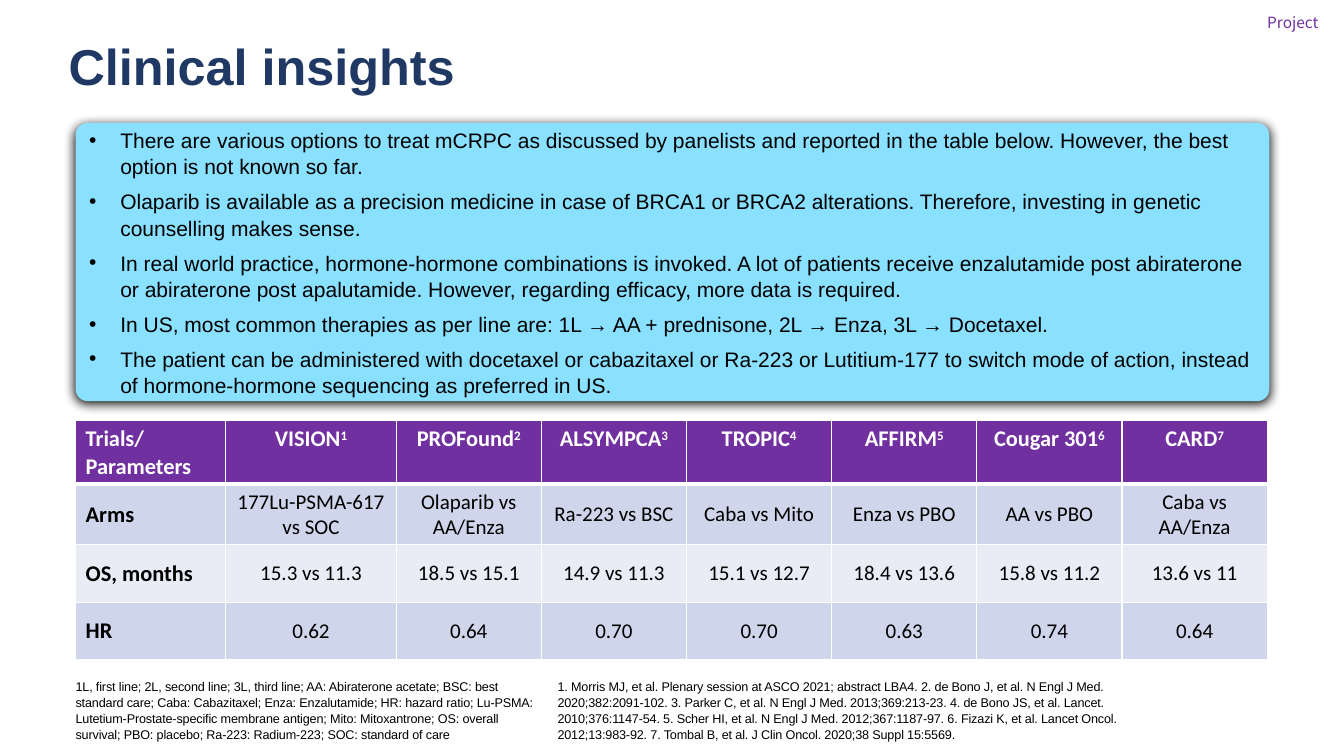
from lxml import etree
from pptx import Presentation
from pptx.dml.color import RGBColor
from pptx.enum.shapes import MSO_SHAPE as Shape
from pptx.enum.text import MSO_ANCHOR as Anchor, PP_ALIGN as Align
from pptx.oxml import parse_xml
from pptx.oxml.ns import nsdecls, qn
from pptx.util import Inches, Pt

COLORS = {
    "purple": "7030A0", "navy": "203864", "sky": "89E0FF", "black": "000000",
    "white": "FFFFFF", "band": "CFD5EA", "light": "E9EBF5",
}
INSIGHTS = [
    "There are various options to treat mCRPC as discussed by panelists and reported in the table below. However, the best option is not known so far.",
    "Olaparib is available as a precision medicine in case of BRCA1 or BRCA2 alterations. Therefore, investing in genetic counselling makes sense.",
    "In real world practice, hormone-hormone combinations is invoked. A lot of patients receive enzalutamide post abiraterone or abiraterone post apalutamide. However, regarding efficacy, more data is required.",
    "In US, most common therapies as per line are: 1L → AA + prednisone, 2L → Enza, 3L → Docetaxel.",
    "The patient can be administered with docetaxel or cabazitaxel or Ra-223 or Lutitium-177 to switch mode of action, instead of hormone-hormone sequencing as preferred in US.",
]
TRIALS = [
    ["Trials/\nParameters", "VISION", "PROFound", "ALSYMPCA", "TROPIC", "AFFIRM", "Cougar 301", "CARD"],
    ["Arms", "177Lu-PSMA-617\nvs SOC", "Olaparib vs AA/Enza", "Ra-223 vs BSC", "Caba vs Mito",
     "Enza vs PBO", "AA vs PBO", "Caba vs AA/Enza"],
    ["OS, months", "15.3 vs 11.3", "18.5 vs 15.1", "14.9 vs 11.3", "15.1 vs 12.7",
     "18.4 vs 13.6", "15.8 vs 11.2", "13.6 vs 11"],
    ["HR", "0.62", "0.64", "0.70", "0.70", "0.63", "0.74", "0.64"],
]
ABBREVIATIONS = "1L, first line; 2L, second line; 3L, third line; AA: Abiraterone acetate; BSC: best standard care; Caba: Cabazitaxel; Enza: Enzalutamide; HR: hazard ratio; Lu-PSMA: Lutetium-Prostate-specific membrane antigen; Mito: Mitoxantrone; OS: overall survival; PBO: placebo; Ra-223: Radium-223; SOC: standard of care"
REFERENCES = "1. Morris MJ, et al. Plenary session at ASCO 2021; abstract LBA4. 2. de Bono J, et al. N Engl J Med. 2020;382:2091-102. 3. Parker C, et al. N Engl J Med. 2013;369:213-23. 4. de Bono JS, et al. Lancet. 2010;376:1147-54. 5. Scher HI, et al. N Engl J Med. 2012;367:1187-97. 6. Fizazi K, et al. Lancet Oncol. 2012;13:983-92. 7. Tombal B, et al. J Clin Oncol. 2020;38 Suppl 15:5569."


def apply_format(target, **values):
    """Set each given attribute on the target."""
    for name, value in values.items():
        setattr(target, name, value)


def add_run(paragraph, text, color, **values):
    """Add a run with its colour and font values."""
    run = paragraph.add_run()
    run.text = text
    run.font.color.rgb = RGBColor.from_string(COLORS[color])
    apply_format(run.font, **values)
    return run


def add_title(slide, box, text):
    """Place the title placeholder and format its text."""
    title = slide.shapes.title
    apply_format(title, **dict(zip(("left", "top", "width", "height"), map(Inches, box))))
    apply_format(title.text_frame, word_wrap=True, vertical_anchor=Anchor.MIDDLE)
    paragraph = title.text_frame.paragraphs[0]
    paragraph.alignment = Align.LEFT
    add_run(paragraph, text, "navy", name="Arial", size=Pt(36), bold=True)


def add_project_label(slide, box, text):
    """Add the small label in the top right corner."""
    frame = slide.shapes.add_textbox(*map(Inches, box)).text_frame
    frame.word_wrap = True
    add_run(frame.paragraphs[0], text, "purple", name="Noto Sans CJK SC", size=Pt(11))


def add_insights(slide, box, items):
    """Add the shadowed panel with its bulleted insights."""
    panel = slide.shapes.add_shape(Shape.ROUNDED_RECTANGLE, *map(Inches, box))
    panel.adjustments[0] = 0.044
    panel.fill.solid()
    panel.fill.fore_color.rgb = RGBColor.from_string(COLORS["sky"])
    panel.line.fill.background()
    panel._element.spPr.append(parse_xml(
        f'<a:effectLst {nsdecls("a")}><a:outerShdw blurRad="{Pt(8.5)}" dist="{Pt(1)}" dir="5400000" '
        f'algn="t" rotWithShape="0"><a:srgbClr val="{COLORS["black"]}"/></a:outerShdw></a:effectLst>'))
    frame = panel.text_frame
    apply_format(frame, word_wrap=True, vertical_anchor=Anchor.MIDDLE)
    for index, item in enumerate(items):
        paragraph = frame.add_paragraph() if index else frame.paragraphs[0]
        properties = paragraph._p.get_or_add_pPr()
        properties.set("marL", str(Inches(0.31)))
        properties.set("indent", str(-Inches(0.31)))
        etree.SubElement(properties, qn("a:buFont")).set("typeface", "Arial")
        etree.SubElement(properties, qn("a:buChar")).set("char", "•")
        apply_format(paragraph, alignment=Align.LEFT, space_after=Pt(6), line_spacing=1.05)
        add_run(paragraph, item, "black", name="Arial", size=Pt(15))


def add_borders(cell, bottom_width):
    """Give a cell white borders."""
    properties = cell._tc.get_or_add_tcPr()
    widths = {"lnL": 1, "lnR": 1, "lnT": 1, "lnB": bottom_width}
    for index, (side, width) in enumerate(widths.items()):
        properties.insert(index, parse_xml(
            f'<a:{side} {nsdecls("a")} w="{Pt(width)}"><a:solidFill>'
            f'<a:srgbClr val="{COLORS["white"]}"/></a:solidFill></a:{side}>'))


def fill_cell(cell, text, row, column):
    """Write and format one cell by its place in the table."""
    header, label = row == 0, column == 0
    cell.fill.solid()
    fill = "purple" if header else ("light", "band")[row % 2]
    cell.fill.fore_color.rgb = RGBColor.from_string(COLORS[fill])
    cell.vertical_anchor = Anchor.TOP if header and not label else Anchor.MIDDLE
    add_borders(cell, 3 if header else 1)
    strong = header or label
    color = "white" if header else "black"
    font = {"name": "Calibri", "size": Pt(16 if strong else 15), "bold": strong}
    for index, line in enumerate(text.split("\n")):
        paragraph = cell.text_frame.add_paragraph() if index else cell.text_frame.paragraphs[0]
        paragraph.alignment = Align.LEFT if label else Align.CENTER
        add_run(paragraph, line, color, **font)
        if header and not label:
            reference = add_run(paragraph, str(column), color, **font)
            reference._r.get_or_add_rPr().set("baseline", "30000")


def add_trials(slide, box, rows):
    """Add the table that compares the trials."""
    table = slide.shapes.add_table(len(rows), len(rows[0]), *map(Inches, box)).table
    for column, width in zip(table.columns, [1.49, 1.69] + [1.44] * 6):
        column.width = Inches(width)
    for row, height in zip(table.rows, [0.6, 0.55, 0.57, 0.57]):
        row.height = Inches(height)
    for row, texts in enumerate(rows):
        for column, text in enumerate(texts):
            fill_cell(table.cell(row, column), text, row, column)


def add_footnote(slide, box, text):
    """Add a small note without insets."""
    frame = slide.shapes.add_textbox(*map(Inches, box)).text_frame
    apply_format(frame, word_wrap=True, margin_left=0, margin_right=0, margin_top=0, margin_bottom=0)
    paragraph = frame.paragraphs[0]
    paragraph.line_spacing = 1.05
    run = add_run(paragraph, text, "black", name="Arial", size=Pt(9))
    run._r.get_or_add_rPr().set("spc", "-10")


def main():
    """Build the slide and save it."""
    presentation = Presentation()
    apply_format(presentation, slide_width=Inches(13.33), slide_height=Inches(7.5))
    slide = presentation.slides.add_slide(presentation.slide_layouts[5])
    left, width = 0.75, 11.84
    add_project_label(slide, (12.47, 0.08, 0.86, 0.26), "Project")
    add_title(slide, (0.58, 0.29, 7.82, 0.71), "Clinical insights")
    add_trials(slide, (left, 4.17, width, 2.29), TRIALS)
    add_footnote(slide, (5.53, 6.73, 5.9, 0.61), REFERENCES)
    add_footnote(slide, (left, 6.73, 4.53, 0.61), ABBREVIATIONS)
    add_insights(slide, (left, 1.22, width, 2.76), INSIGHTS)
    presentation.save("out.pptx")


if __name__ == "__main__":
    main()
